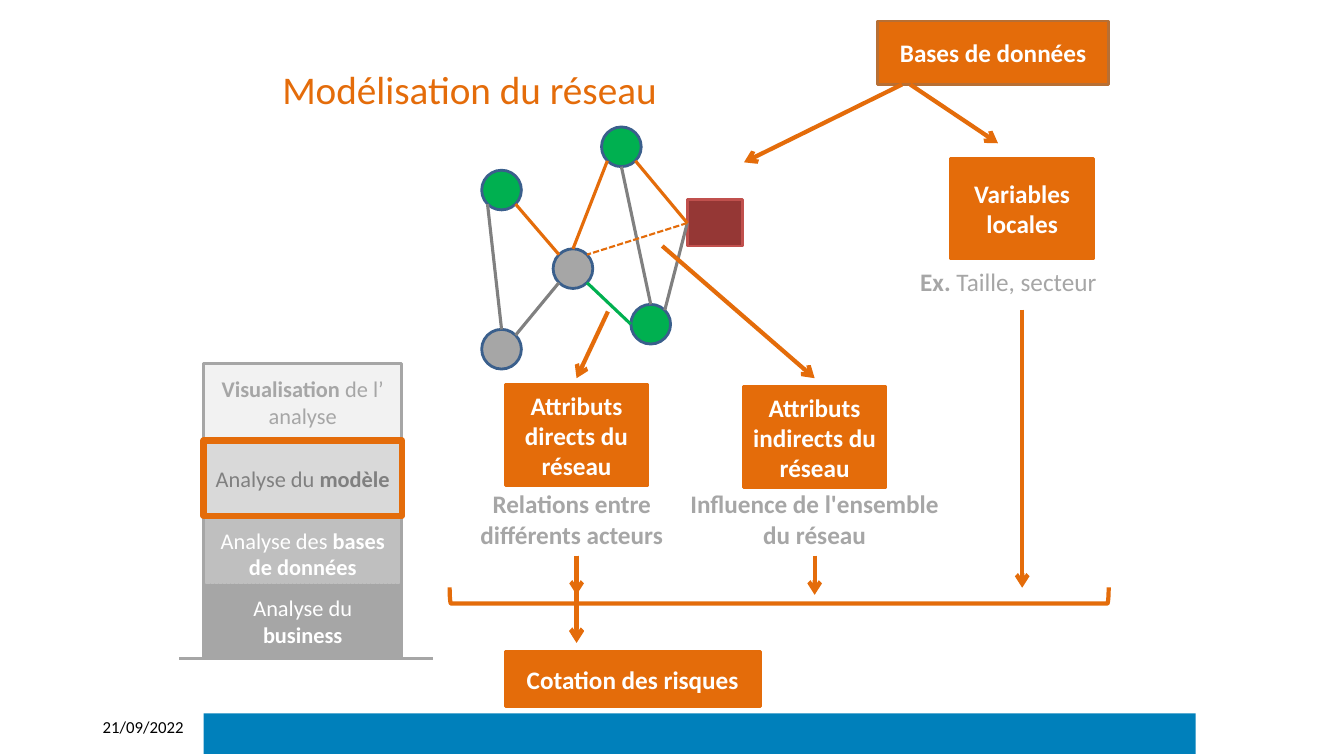
import math
from pptx import Presentation
from pptx import util as u
from pptx.dml.color import RGBColor
from pptx.enum import dml, shapes, text
from pptx.oxml.ns import qn
from lxml import etree

ORANGE = RGBColor(0xE4, 0x6C, 0x0A)
BROWN = RGBColor(0xB7, 0x6F, 0x34)
GREEN = RGBColor(0x00, 0xB0, 0x50)
NAVY = RGBColor(0x3A, 0x5F, 0x8C)
BLUE = RGBColor(0x00, 0x80, 0xBB)
WINE = RGBColor(0x95, 0x37, 0x35)
RED = RGBColor(0xC0, 0x50, 0x4D)
SAND = RGBColor(0xC4, 0xBD, 0x97)
DARK = RGBColor(0x80, 0x80, 0x80)
GREY = RGBColor(0xA6, 0xA6, 0xA6)
MID = RGBColor(0xBF, 0xBF, 0xBF)
LIGHT = RGBColor(0xD9, 0xD9, 0xD9)
PALE = RGBColor(0xF2, 0xF2, 0xF2)
WHITE = RGBColor(0xFF, 0xFF, 0xFF)
BLACK = RGBColor(0x00, 0x00, 0x00)

KIND = shapes.MSO_SHAPE
DASH = dml.MSO_LINE.SQUARE_DOT
MIDDLE = text.MSO_ANCHOR.MIDDLE
CENTER, LEFT = text.PP_ALIGN.CENTER, text.PP_ALIGN.LEFT


def cm(*vals):
    return [u.Cm(v) for v in vals]


def write(shape, runs, size, color, align=CENTER, **frame):
    """Fill a shape with (words, bold) runs in one paragraph."""
    for key, val in frame.items():
        setattr(shape.text_frame, key, val)
    para = shape.text_frame.paragraphs[0]
    para.alignment = align
    for words, bold in runs:
        run = para.add_run()
        run.text = words
        form = {"name": "Calibri", "size": u.Pt(size), "bold": bold}
        for key, val in form.items():
            setattr(run.font, key, val)
        run.font.color.rgb = color


def block(slide, box, fill=None, edge=None, width=2, kind=KIND.RECTANGLE, dash=None):
    shape = slide.shapes.add_shape(kind, *cm(*box))
    shape.shadow.inherit = False
    if fill is None:
        shape.fill.background()
    else:
        shape.fill.solid()
        shape.fill.fore_color.rgb = fill
    if edge is None:
        shape.line.fill.background()
    else:
        shape.line.color.rgb = edge
        shape.line.width = u.Pt(width)
    if dash:
        shape.line.dash_style = dash
    return shape


def label(slide, box, words, edge=ORANGE):
    shape = block(slide, box, ORANGE, edge)
    write(shape, [(words, True)], 18, WHITE, vertical_anchor=MIDDLE)


def note(slide, box, runs, size=18, color=GREY, align=CENTER, wrap=True):
    shape = slide.shapes.add_textbox(*cm(*box))
    write(shape, runs, size, color, align, word_wrap=wrap)


def link(slide, start, end, color=ORANGE, width=3, dash=None, head=False):
    line = slide.shapes.add_connector(shapes.MSO_CONNECTOR.STRAIGHT, *cm(*start, *end))
    line.line.color.rgb = color
    line.line.width = u.Pt(width)
    if dash:
        line.line.dash_style = dash
    if head:
        etree.SubElement(line.line._get_or_add_ln(), qn("a:tailEnd"), type="arrow")
    etree.SubElement(line._element.spPr, qn("a:effectLst"))


def arrow(slide, x, y, path):
    """Draw an arrow whose ends are given relative to (x, y)."""
    x1, y1, x2, y2 = path
    link(slide, (x + x1, y + y1), (x + x2, y + y2), head=True)


def footer(slide, x, y):
    block(slide, (x + 2.79, y + 0.05, 25, 1.02), BLUE)
    note(slide, (x, y, 3.2, 1.02), [("21/09/2022", False)], 12, BLACK, LEFT)


def title(slide, x, y):
    head = slide.shapes.title
    place = dict(zip(("left", "top", "width", "height"), cm(x, y, 10.06, 1.45)))
    for key, val in place.items():
        setattr(head, key, val)
    write(head, [("Modélisation du réseau", False)], 28, ORANGE, LEFT,
          word_wrap=False, auto_size=text.MSO_AUTO_SIZE.NONE, vertical_anchor=MIDDLE)


def network(slide, x, y):
    rad = 0.5
    nodes = {"A": (0.5, 1.59, GREEN), "B": (3.52, 0.5, GREEN), "C": (4.26, 4.97, GREEN),
             "D": (0.5, 5.6, GREY), "E": (2.3, 3.57, GREY)}
    for dx, dy, fill in nodes.values():
        block(slide, (x + dx - rad, y + dy - rad, 2 * rad, 2 * rad), fill, NAVY, kind=KIND.OVAL)
    # Target square
    block(slide, (x + 5.18, y + 1.83, 1.4, 1.17), WINE, RED)

    def port(name, deg):
        if name == "T":
            return x + 5.18, y + 2.42
        dx, dy, _ = nodes[name]
        ang = math.radians(deg)
        return x + dx + rad * math.cos(ang), y + dy - rad * math.sin(ang)

    # Edges: node and angle at each end
    edges = [("B", 270, "C", 90, DARK), ("B", 225, "E", 90, ORANGE), ("E", 315, "C", 180, GREEN),
             ("E", 225, "D", 45, DARK), ("E", 135, "A", 315, ORANGE), ("A", 225, "D", 90, DARK),
             ("B", 315, "T", 180, ORANGE), ("C", 45, "T", 180, DARK)]
    for one, deg, two, turn, color in edges:
        link(slide, port(one, deg), port(two, turn), color, 2.25)
    link(slide, port("T", 180), port("E", 45), ORANGE, 1.5, DASH)


def flow(slide, x, y):
    # Bracket, turned to open upwards
    mark = block(slide, (x + 8.1, y - 3, 0.41, 16.61), None, ORANGE, 3, KIND.RIGHT_BRACKET)
    mark.rotation = 90
    # Attributes: centre, top, name, caption, its centre and width
    cols = [(3.2, 0, "Attributs directs du réseau", "Relations entre différents acteurs", 3.08, 5.26),
            (9.2, 0.05, "Attributs indirects du réseau", "Influence de l'ensemble du réseau", 9.2, 6.83)]
    for mid, top, name, words, axis, wide in cols:
        label(slide, (x + mid - 1.8, y + top, 3.6, 2.54), name)
        note(slide, (x + axis - wide / 2, y + 2.49, wide, 1.8), [(words, True)])
        arrow(slide, x, y, (mid, 4.3, mid, 5.29))
    # Arrows from the network, then down to the rating
    for path in [(3.99, -1.85, 3.2, -0.17), (5.36, -3.5, 9.2, -0.17),
                 (3.2, 4.3, 3.2, 6.48), (3.2, 5.49, 3.2, 6.5)]:
        arrow(slide, x, y, path)
    label(slide, (x + 1.4, y + 6.71, 6.43, 1.4), "Cotation des risques")


def bases(slide, x, y):
    label(slide, (x, y, 5.82, 1.6), "Bases de données", BROWN)
    label(slide, (x + 1.84, y + 3.46, 3.6, 2.54), "Variables locales")
    note(slide, (x + 0.82, y + 6.05, 5, 1.02), [("Ex. ", True), ("Taille, secteur", False)],
         align=LEFT, wrap=False)
    for path in [(0.61, 1.6, -3.37, 3.56), (0.82, 1.6, 3.03, 3.08), (3.64, 7.27, 3.64, 14.28)]:
        arrow(slide, x, y, path)


def stack(slide, x, y):
    wide, high = 5, 1.9
    link(slide, (x - 0.61, y + 7.42), (x + 5.79, y + 7.42), GREY, 2.25)
    # Layers, top to bottom
    layers = [(0.02, PALE, SAND, GREY, [("Visualisation ", True), ("de l’ analyse", False)]),
              (1.93, LIGHT, SAND, DARK, [("Analyse du ", False), ("modèle", True)]),
              (3.83, MID, SAND, WHITE, [("Analyse des ", False), ("bases de données", True)]),
              (5.54, GREY, MID, WHITE, [("Analyse du ", False), ("business", True)])]
    for top, fill, edge, color, runs in layers:
        shape = block(slide, (x, y + top, wide, high), fill, edge, 0.75, dash=DASH)
        write(shape, runs, 16, color, vertical_anchor=MIDDLE)
    # Frame and current layer
    block(slide, (x, y, wide, 7.44), None, GREY)
    block(slide, (x, y + 1.93, wide, high), None, ORANGE, 4.5)


def main():
    deck = Presentation()
    deck.slide_width, deck.slide_height = cm(33.87, 19.05)
    slide = deck.slides.add_slide(deck.slide_layouts[5])
    footer(slide, 2.34, 17.93)
    title(slide, 6.86, 1.52)
    network(slide, 12.14, 3.2)
    flow(slide, 11.33, 9.7)
    bases(slide, 22.12, 0.53)
    stack(slide, 5.13, 9.17)
    deck.save("out.pptx")


if __name__ == "__main__":
    main()
